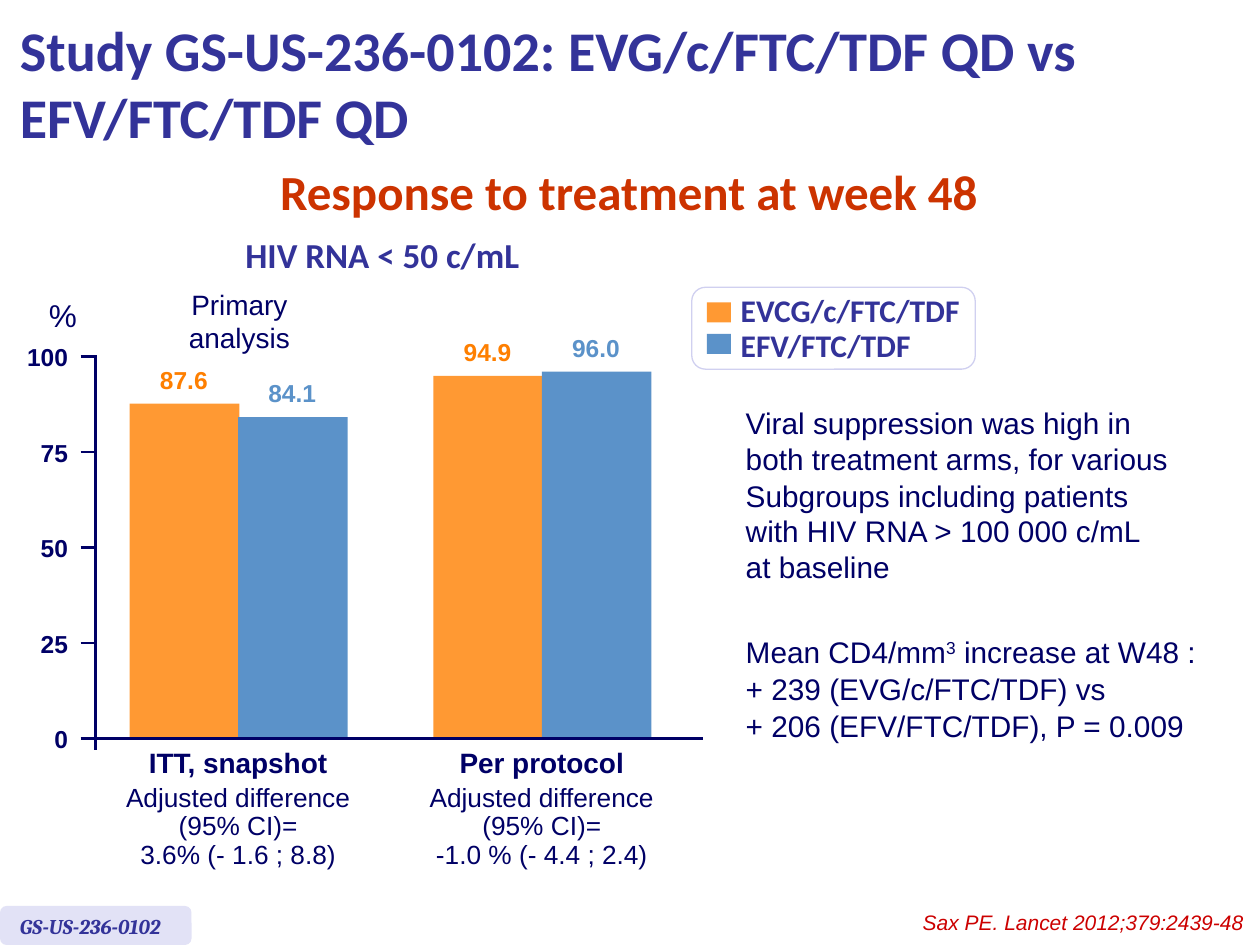
from lxml import etree
from pptx import Presentation
from pptx import util as u
from pptx.dml.color import RGBColor
from pptx.enum import shapes, text
from pptx.oxml.ns import qn

COLORS = {
    "navy": "000066", "indigo": "333399", "rust": "CC3300", "red": "CC0000",
    "orange": "FF9933", "orange_text": "FE7F00", "blue": "5B92C9",
    "lavender": "E2E2F6", "border": "D0D0F0", "white": "FFFFFF",
}
LEFT, CENTER, RIGHT = text.PP_ALIGN.LEFT, text.PP_ALIGN.CENTER, text.PP_ALIGN.RIGHT
RECT, ROUNDED = shapes.MSO_SHAPE.RECTANGLE, shapes.MSO_SHAPE.ROUNDED_RECTANGLE

prs = Presentation()
prs.slide_width, prs.slide_height = u.Inches(10), u.Inches(7.5)
slide = prs.slides.add_slide(prs.slide_layouts[6])
CELL = prs.slide_width / 100  # square grid: 100 columns by 75 rows


def add_label(place, lines, size, color, font="Arial", align=LEFT, bold=False, italic=False,
              middle=False, wrap=False, inset=(1, 0.5), spacing=None, gap=0):
    """Text at (column, row, columns, rows); gap is the space between paragraphs in points."""
    frame = slide.shapes.add_textbox(*(int(n * CELL) for n in place)).text_frame
    frame.word_wrap = wrap
    frame.vertical_anchor = text.MSO_ANCHOR.MIDDLE if middle else text.MSO_ANCHOR.TOP
    frame.margin_left = frame.margin_right = int(inset[0] * CELL)
    frame.margin_top = frame.margin_bottom = int(inset[1] * CELL)
    for i, line in enumerate(lines):
        paragraph = frame.add_paragraph() if i else frame.paragraphs[0]
        paragraph.text = line
        paragraph.alignment = align
        if spacing:
            paragraph.line_spacing = spacing
        if i and gap:
            paragraph.space_before = u.Pt(gap)
        paragraph.font.name, paragraph.font.size = font, u.Pt(size)
        paragraph.font.bold, paragraph.font.italic = bold, italic
        paragraph.font.color.rgb = RGBColor.from_string(COLORS[color])
    return frame


def add_block(place, fill, kind=RECT, border=None):
    block = slide.shapes.add_shape(kind, *(int(n * CELL) for n in place))
    block.shadow.inherit = False
    block.fill.solid()
    block.fill.fore_color.rgb = RGBColor.from_string(COLORS[fill])
    if border:
        block.line.color.rgb = RGBColor.from_string(COLORS[border])
        block.line.width = u.Pt(0.75)
    else:
        block.line.fill.background()


# Headings
add_label((0.6, 0.5, 95.5, 12.1), ["Study GS-US-236-0102: EVG/c/FTC/TDF QD vs EFV/FTC/TDF QD"],
          32, "indigo", "Calibri", bold=True, middle=True, wrap=True)
add_label((21, 12.3, 57.8, 5.7), ["Response to treatment at week 48"],
          28, "rust", "Calibri", CENTER, bold=True)
add_label((13.1, 18.6, 34.5, 3.8), ["HIV RNA < 50 c/mL"],
          20, "indigo", "Calibri", CENTER, bold=True, middle=True, wrap=True, spacing=0.8)

# Bars, with their values and the notes under each group
BASE, TOP = 58.5, 28.3
BAR = 8.7
groups = [
    (10.3, "ITT, snapshot", "3.6% (- 1.6 ; 8.8)", (87.6, 84.1)),
    (34.4, "Per protocol", "-1.0 % (- 4.4 ; 2.4)", (94.9, 96.0)),
]
arms = [("orange", "orange_text"), ("blue", "blue")]
for start, population, difference, rates in groups:
    for i, (rate, (fill, ink)) in enumerate(zip(rates, arms)):
        left = start + i * (BAR - 0.1)
        height = (BASE - TOP) * rate / 100
        add_block((left, BASE - height, BAR, height), fill)
        add_label((left + 0.5, BASE - height - 4.1, 7.6, 4.4), [f"{rate:.1f}"],
                  14, ink, align=CENTER, bold=True, inset=(1, 1))
    middle = start + BAR - 0.1
    add_label((middle - 10, 58.7, 20, 3.7), [population], 16, "navy", align=CENTER, bold=True)
    add_label((middle - 10, 61.8, 20, 7.8), ["Adjusted difference", "(95% CI)=", difference],
              15, "navy", align=CENTER, spacing=0.9)
add_label((12.5, 22.3, 13, 6.4), ["Primary\nanalysis"], 16, "navy", align=CENTER)

# Axes and scale
axis_lines = [(6.4, 58.6, 55.8, 58.6), (7.6, 28.2, 7.6, 59.5)]
for percent in range(0, 101, 25):
    row = 58.6 - (58.6 - TOP) * percent / 100
    add_label((1.2, row - 1.1, 4.2, 2.3), [str(percent)], 14, "navy",
              align=RIGHT, bold=True, middle=True, inset=(0, 0))
    if percent:
        axis_lines.append((6.4, row, 7.7, row))
for ends in axis_lines:
    line = slide.shapes.add_connector(shapes.MSO_CONNECTOR.STRAIGHT, *(int(n * CELL) for n in ends))
    line.line.color.rgb = RGBColor.from_string(COLORS["navy"])
    line.line.width = u.Pt(1.5)
    etree.SubElement(line._element.spPr, qn("a:effectLst"))
add_label((2.8, 23, 4.3, 4), ["%"], 18, "navy", align=RIGHT)

# Legend
add_block((54.9, 22.8, 22.5, 6.5), "white", ROUNDED, "border")
for i, (arm, fill) in enumerate([("EVCG/c/FTC/TDF", "orange"), ("EFV/FTC/TDF", "blue")]):
    add_block((56.1, 24 + 2.5 * i, 1.9, 1.6), fill)
    add_label((57.8, 22.6 + 2.8 * i, 19.5, 4), [arm], 18, "indigo", "Calibri", bold=True)

# Findings
add_label((58.2, 31.5, 39.1, 15.5),
          ["Viral suppression was high in\nboth treatment arms, for various",
           "Subgroups including patients\nwith HIV RNA > 100 000 c/mL\nat baseline"],
          17, "navy", middle=True, wrap=True, gap=0.85)
cd4 = add_label((58.2, 49.7, 39.9, 9.9),
                ["Mean CD4/mm", "+ 239 (EVG/c/FTC/TDF) vs", "+ 206 (EFV/FTC/TDF), P = 0.009"],
                17, "navy", middle=True, wrap=True, gap=0.85)
for part, baseline in [("3", "30000"), (" increase at W48 :", "0")]:
    run = cd4.paragraphs[0].add_run()
    run.text = part
    run._r.get_or_add_rPr().set("baseline", baseline)

# Footer
add_block((0, 71.9, 15.2, 3.1), "lavender", ROUNDED)
add_label((0.6, 72, 14.1, 3), ["GS-US-236-0102"], 12, "indigo", "Cambria",
          bold=True, italic=True, wrap=True)
add_label((69.7, 71.7, 30, 3), ["Sax PE. Lancet 2012;379:2439-48"], 12, "red",
          align=RIGHT, italic=True, wrap=True)

prs.save("out.pptx")
